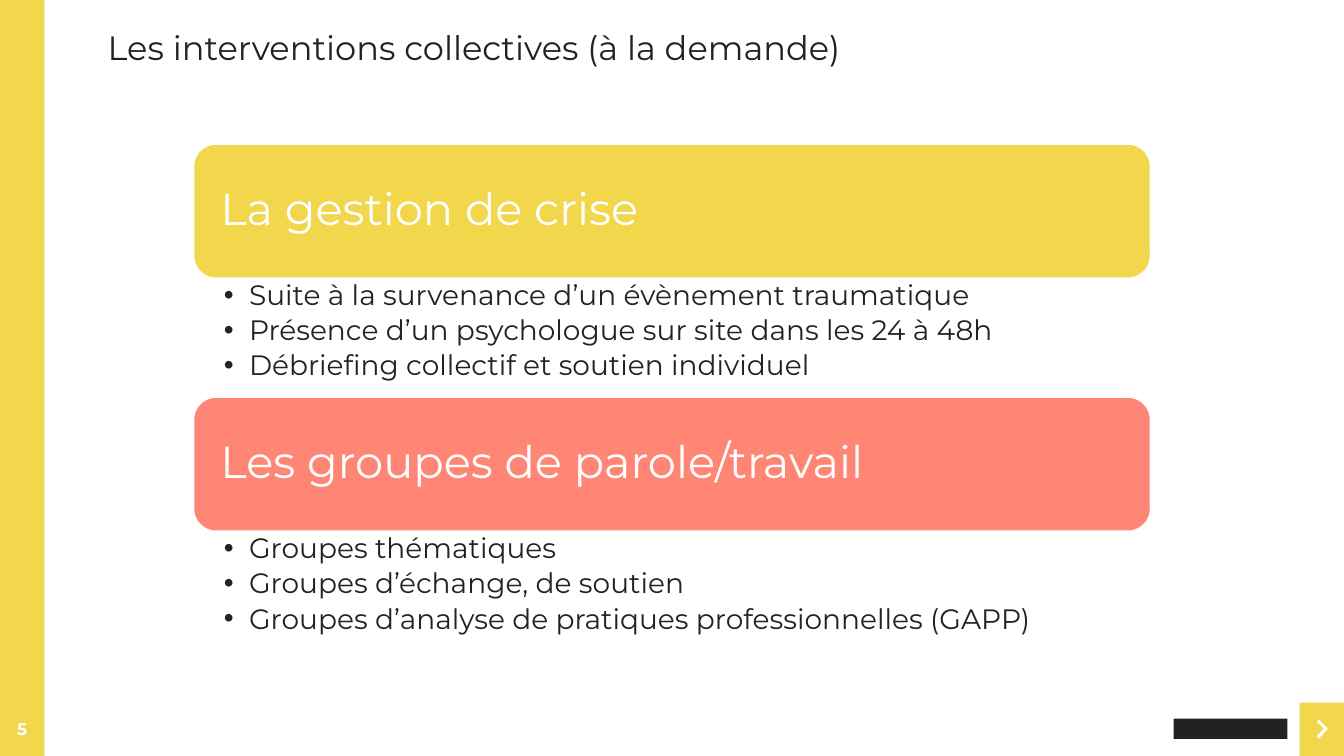
from lxml import etree
from pptx import Presentation
from pptx.dml.color import RGBColor
from pptx.enum import shapes, text
from pptx.oxml import ns
from pptx.util import Inches, Pt

GOLD = RGBColor(0xF2, 0xD6, 0x4B)
CORAL = RGBColor(0xFF, 0x85, 0x75)
DARK = RGBColor(0x22, 0x22, 0x22)
WHITE = RGBColor(0xFF, 0xFF, 0xFF)
FONT = "Montserrat"
WIDE, HIGH = 13.33, 7.5
SIDE = 0.44
HEAD, BODY = 1.33, 1.18

TOPICS = [
    ("La gestion de crise", GOLD, [
        "Suite à la survenance d’un évènement traumatique",
        "Présence d’un psychologue sur site dans les 24 à 48h",
        "Débriefing collectif et soutien individuel"]),
    ("Les groupes de parole/travail", CORAL, [
        "Groupes thématiques",
        "Groupes d’échange, de soutien",
        "Groupes d’analyse de pratiques professionnelles (GAPP)"]),
]


def write(shape, *lines, size, color=DARK, bold=False, align=text.PP_ALIGN.LEFT,
          anchor=text.MSO_ANCHOR.TOP, inset=(0.1, 0.05, 0.1, 0.05),
          line=1.0, after=0, bullet=False):
    """Fill a shape with formatted paragraphs."""
    frame = shape.text_frame
    frame.word_wrap = True
    frame.vertical_anchor = anchor
    (frame.margin_left, frame.margin_top,
     frame.margin_right, frame.margin_bottom) = map(Inches, inset)
    for i, words in enumerate(lines):
        para = frame.add_paragraph() if i else frame.paragraphs[0]
        para.alignment = align
        para.line_spacing = line
        para.space_after = Pt(after)
        run = para.add_run()
        run.text = words
        font = run.font
        font.name, font.size, font.bold = FONT, Pt(size), bold
        font.color.rgb = color
        if bullet:
            props = para._p.get_or_add_pPr()
            props.set("marL", str(Inches(0.25)))
            props.set("indent", str(Inches(-0.25)))
            etree.SubElement(props, ns.qn("a:buFont")).set("typeface", "Arial")
            etree.SubElement(props, ns.qn("a:buChar")).set("char", "•")


def label(slide, box, *lines, **style):
    """Add a text box."""
    write(slide.shapes.add_textbox(*map(Inches, box)), *lines, **style)


def paint(shape, color, edge=None):
    """Give a shape a flat fill and an optional edge."""
    shape.shadow.inherit = False
    shape.fill.solid()
    shape.fill.fore_color.rgb = color
    if edge is None:
        shape.line.fill.background()
    else:
        shape.line.color.rgb = edge
        shape.line.width = Pt(1)
    return shape


def block(slide, box, color, kind=shapes.MSO_SHAPE.RECTANGLE, edge=None):
    """Add a filled preset shape."""
    return paint(slide.shapes.add_shape(kind, *map(Inches, box)), color, edge)


def margin(slide, box, number):
    """Draw the side band with its page number."""
    left, top, width, height = box
    block(slide, box, GOLD)
    label(slide, (left, top + height - 0.47, width, 0.4), number, size=12,
          color=WHITE, bold=True, align=text.PP_ALIGN.CENTER,
          anchor=text.MSO_ANCHOR.MIDDLE)


def corner(slide, box):
    """Draw the corner tile with its chevron and the brand bar."""
    left, top, width, height = box
    block(slide, box, GOLD)
    points = [(0.17, 0.19), (0.24, 0.26), (0.17, 0.33),
              (0.19, 0.36), (0.28, 0.26), (0.19, 0.17)]
    spots = [(Inches(left + x), Inches(top + y)) for x, y in points]
    path = slide.shapes.build_freeform(*spots[0])
    path.add_line_segments(spots[1:], close=True)
    paint(path.convert_to_shape(), WHITE)
    block(slide, (left - 1.25, top + 0.16, 1.13, 0.2), DARK)


def topic(slide, box, title, color, items):
    """Draw a heading card with its bullets below."""
    left, top, width, height = box
    card = block(slide, (left, top, width, HEAD), color,
                 shapes.MSO_SHAPE.ROUNDED_RECTANGLE, WHITE)
    write(card, title, size=32, color=WHITE, line=0.9,
          anchor=text.MSO_ANCHOR.MIDDLE, inset=(0.2, 0.13, 0.2, 0.13))
    label(slide, (left, top + HEAD, width, height - HEAD), *items, size=20,
          line=0.9, after=3.6, bullet=True, inset=(0.3, 0.03, 0.16, 0.03))


def main():
    """Build and save the slide."""
    deck = Presentation()
    deck.slide_width, deck.slide_height = Inches(WIDE), Inches(HIGH)
    slide = deck.slides.add_slide(deck.slide_layouts[6])
    margin(slide, (0, 0, SIDE, HIGH), "5")
    corner(slide, (WIDE - SIDE, HIGH - 0.53, SIDE, 0.53))
    label(slide, (0.97, 0.22, 11.44, 0.5),
          "Les interventions collectives (à la demande)", size=24)
    step = HEAD + BODY
    for i, (title, color, items) in enumerate(TOPICS):
        topic(slide, (1.92, 1.43 + i * step, 9.49, step), title, color, items)
    deck.save("out.pptx")


if __name__ == "__main__":
    main()
